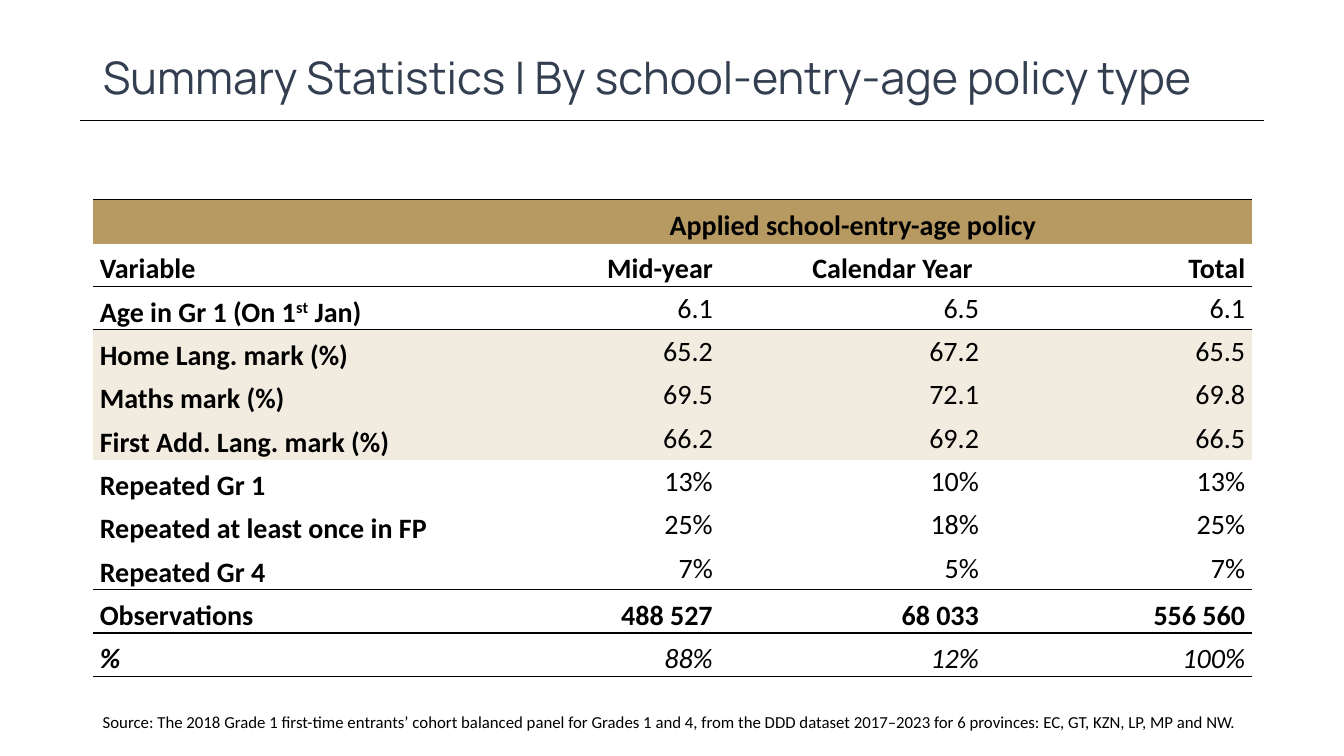
from lxml import etree
from pptx import Presentation
from pptx.dml.color import RGBColor
from pptx.enum.shapes import MSO_CONNECTOR
from pptx.enum.text import MSO_ANCHOR, MSO_AUTO_SIZE, PP_ALIGN
from pptx.oxml.ns import qn
from pptx.util import Inches, Pt

BLACK = RGBColor(0x00, 0x00, 0x00)
SLATE = RGBColor(0x33, 0x3F, 0x50)
GOLD = RGBColor(0xB7, 0x99, 0x62)
CREAM = RGBColor(0xF1, 0xEB, 0xE0)
LEFT, CENTER, RIGHT = PP_ALIGN.LEFT, PP_ALIGN.CENTER, PP_ALIGN.RIGHT
TOP, MIDDLE, BOTTOM = MSO_ANCHOR.TOP, MSO_ANCHOR.MIDDLE, MSO_ANCHOR.BOTTOM
STRAIGHT = MSO_CONNECTOR.STRAIGHT
FIT_SHAPE = MSO_AUTO_SIZE.SHAPE_TO_FIT_TEXT

ROWS = [
    ["", "Applied school-entry-age policy", "", ""],
    ["Variable", "Mid-year", "Calendar Year ", "Total"],
    ["Age in Gr 1 (On 1^st^ Jan)", "6.1", "6.5", "6.1"],
    ["Home Lang. mark (%)", "65.2", "67.2", "65.5"],
    ["Maths mark (%)", "69.5", "72.1", "69.8"],
    ["First Add. Lang. mark (%)", "66.2", "69.2", "66.5"],
    ["Repeated Gr 1", "13%", "10%", "13%"],
    ["Repeated at least once in FP", "25%", "18%", "25%"],
    ["Repeated Gr 4", "7%", "5%", "7%"],
    ["Observations", "488 527", "68 033", "556 560"],
    ["%", "88%", "12%", "100%"],
]
COLUMN_WIDTHS = [3.58, 2.64, 2.64, 2.64]
ROW_HEIGHT = 0.43
ROW_FILLS = {0: GOLD, 3: CREAM, 4: CREAM, 5: CREAM}
# Rule colour by edge number: edge 0 is the top of the table
RULES = {0: BLACK, 1: GOLD, 2: BLACK, 3: BLACK, 9: BLACK, 10: BLACK, 11: BLACK}


def add_text(para, text, formats):
    """Write text into a paragraph; parts between ^ marks are superscript."""
    for number, part in enumerate(text.split("^")):
        span = para.add_run()
        span.text = part
        for name, value in formats.items():
            setattr(span.font, name, value)
        span.font.color.rgb = BLACK
        if number % 2:
            span.font._element.set("baseline", "30000")


def set_border(cell, side, color):
    """Draw one side of a cell, or clear it when color is None."""
    line = etree.SubElement(cell._tc.get_or_add_tcPr(), qn("a:" + side), w="12700")
    if color is None:
        etree.SubElement(line, qn("a:noFill"))
    else:
        fill = etree.SubElement(line, qn("a:solidFill"))
        etree.SubElement(fill, qn("a:srgbClr"), val=str(color))


deck = Presentation()
deck.slide_width, deck.slide_height = Inches(13.33), Inches(7.5)
page = deck.slides.add_slide(deck.slide_layouts[5])

# Title and the rule below it
title = page.shapes.title
title.left, title.top = Inches(0.92), Inches(0.4)
title.width, title.height = Inches(11.5), Inches(0.79)
title.text_frame.text = "Summary Statistics | By school-entry-age policy type"
title.text_frame.vertical_anchor = MIDDLE
para = title.text_frame.paragraphs[0]
para.alignment, para.line_spacing = LEFT, 0.9
for name, value in {"name": "Manrope", "size": Pt(32)}.items():
    setattr(para.font, name, value)
para.font.color.rgb = SLATE

rule = page.shapes.add_connector(
    STRAIGHT, Inches(0.79), Inches(1.19), Inches(12.54), Inches(1.19))
rule.line.color.rgb = BLACK
rule.line.width = Pt(0.5)
etree.SubElement(rule._element.spPr, qn("a:effectLst"))

# Statistics table
table = page.shapes.add_table(
    len(ROWS), len(COLUMN_WIDTHS), Inches(0.92), Inches(1.98),
    Inches(sum(COLUMN_WIDTHS)), Inches(ROW_HEIGHT * len(ROWS))).table
table.first_row = table.horz_banding = False
for column, width in zip(table.columns, COLUMN_WIDTHS):
    column.width = Inches(width)
table.cell(0, 1).merge(table.cell(0, 3))

for r, texts in enumerate(ROWS):
    table.rows[r].height = Inches(ROW_HEIGHT)
    for c, text in enumerate(texts):
        cell = table.cell(r, c)
        is_figure = c > 0 and 2 <= r <= 8
        cell.margin_left = cell.margin_right = Inches(0.07)
        cell.margin_top = cell.margin_bottom = 0
        cell.vertical_anchor = TOP if is_figure else BOTTOM

        # Borders come before the fill in the cell properties
        for side, color in {"lnL": None, "lnR": None, "lnT": RULES.get(r),
                            "lnB": RULES.get(r + 1)}.items():
            set_border(cell, side, color)
        if r in ROW_FILLS:
            cell.fill.solid()
            cell.fill.fore_color.rgb = ROW_FILLS[r]
        else:
            cell.fill.background()

        if text:
            para = cell.text_frame.paragraphs[0]
            para.alignment = LEFT if c == 0 else CENTER if r == 0 else RIGHT
            para.line_spacing = 1.15
            add_text(para, text, {
                "name": "Calibri", "size": Pt(20),
                "bold": c == 0 or r in (0, 1, 9), "italic": r == 10})

# Source note
note = page.shapes.add_textbox(Inches(0.92), Inches(7.01), Inches(11.5), Inches(0.3))
note.text_frame.word_wrap = True
note.text_frame.auto_size = FIT_SHAPE
add_text(
    note.text_frame.paragraphs[0],
    "Source: The 2018 Grade 1 first-time entrants’ cohort balanced panel for Grades 1 and 4, "
    "from the DDD dataset 2017–2023 for 6 provinces: EC, GT, KZN, LP, MP and NW.",
    {"name": "Calibri", "size": Pt(12)})

deck.save("out.pptx")
